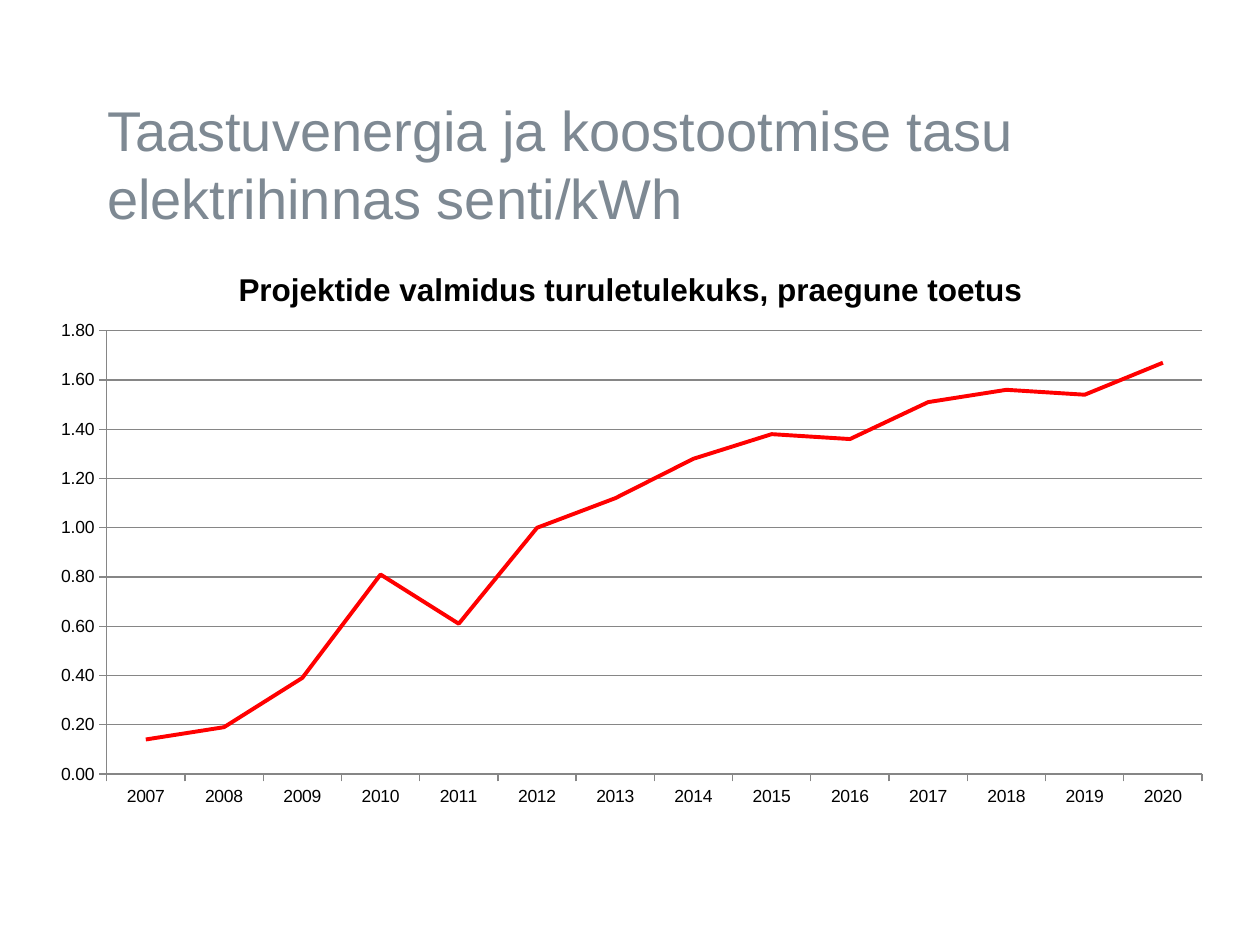
import pptx
import pptx.chart.data
import pptx.dml.color
import pptx.enum.chart
import pptx.enum.text
import pptx.oxml
import pptx.oxml.ns
import pptx.util

SLATE = pptx.dml.color.RGBColor(0x7E, 0x89, 0x93)
BLACK = pptx.dml.color.RGBColor(0, 0, 0)
GREY = pptx.dml.color.RGBColor(0x86, 0x86, 0x86)
RED = pptx.dml.color.RGBColor(0xFF, 0, 0)
FONT = "Arial"
WIDTH, HEIGHT = pptx.util.Inches(10), pptx.util.Inches(7.5)
FIRST_YEAR = 2007
FEES = (0.14, 0.19, 0.39, 0.81, 0.61, 1, 1.12, 1.28, 1.38, 1.36, 1.51, 1.56, 1.54, 1.67)


def box(left, top, width, height):
    """Turn inches into left, top, width and height lengths."""
    return [pptx.util.Inches(length) for length in (left, top, width, height)]


def style_font(font, size, color, bold=False):
    font.name = FONT
    font.size = pptx.util.Pt(size)
    font.bold = bold
    font.color.rgb = color


def set_heading(slide, text):
    heading = slide.shapes.title
    heading.left, heading.top, heading.width, heading.height = box(0.75, 0.67, 8.5, 1.25)
    frame = heading.text_frame
    frame.text = text
    frame.word_wrap = True
    frame.auto_size = pptx.enum.text.MSO_AUTO_SIZE.NONE
    frame.vertical_anchor = pptx.enum.text.MSO_ANCHOR.MIDDLE
    paragraph = frame.paragraphs[0]
    paragraph.alignment = pptx.enum.text.PP_ALIGN.LEFT
    style_font(paragraph.runs[0].font, 32, SLATE)


def style_line(line, color, points):
    line.color.rgb = color
    line.width = pptx.util.Pt(points)


def style_axis(axis):
    axis.major_tick_mark = pptx.enum.chart.XL_TICK_MARK.OUTSIDE
    axis.minor_tick_mark = pptx.enum.chart.XL_TICK_MARK.NONE
    style_line(axis.format.line, GREY, 0.75)
    style_font(axis.tick_labels.font, 10, BLACK)


def place_plot(chart, x, y, w, h):
    """Fix the inner plot area, in shares of the chart's size."""
    plot_area = chart.plots[0]._element.getparent()
    for old in plot_area.findall(pptx.oxml.ns.qn("c:layout")):
        plot_area.remove(old)
    shares = "".join(f'<c:{key} val="{share}"/>' for key, share in zip("xywh", (x, y, w, h)))
    plot_area.insert(0, pptx.oxml.parse_xml(
        f'<c:layout {pptx.oxml.ns.nsdecls("c")}><c:manualLayout>'
        '<c:layoutTarget val="inner"/><c:xMode val="edge"/><c:yMode val="edge"/>'
        f'{shares}</c:manualLayout></c:layout>'))


def add_fee_chart(slide, title):
    fees = pptx.chart.data.CategoryChartData(number_format="0.00")
    fees.categories = [str(FIRST_YEAR + step) for step in range(len(FEES))]
    fees.add_series("Series 1", FEES)
    chart = slide.shapes.add_chart(
        pptx.enum.chart.XL_CHART_TYPE.LINE, *box(0.28, 1.94, 9.45, 4.57), fees).chart
    style_font(chart.font, 10, BLACK)
    chart.has_legend = False
    chart.has_title = True
    chart.chart_title.include_in_layout = False
    chart.chart_title.text_frame.text = title
    style_font(chart.chart_title.text_frame.paragraphs[0].runs[0].font, 18, BLACK, bold=True)

    for axis in (chart.category_axis, chart.value_axis):
        style_axis(axis)
    scale = chart.value_axis
    scale.minimum_scale, scale.maximum_scale, scale.major_unit = 0, 1.8, 0.2
    scale.tick_labels.number_format = "0.00"
    scale.tick_labels.number_format_is_linked = False
    scale.has_major_gridlines = True
    style_line(scale.major_gridlines.format.line, GREY, 0.75)

    chart.plots[0].vary_by_categories = False
    fee_line = chart.plots[0].series[0]
    fee_line.smooth = False
    fee_line.marker.style = pptx.enum.chart.XL_MARKER_STYLE.NONE
    style_line(fee_line.format.line, RED, 2.25)
    place_plot(chart, 0.06, 0.15, 0.92, 0.77)


def main():
    deck = pptx.Presentation()
    deck.slide_width, deck.slide_height = WIDTH, HEIGHT
    slide = deck.slides.add_slide(deck.slide_layouts.get_by_name("Title Only"))
    set_heading(slide, "Taastuvenergia ja koostootmise tasu elektrihinnas senti/kWh")
    add_fee_chart(slide, "Projektide valmidus turuletulekuks, praegune toetus")
    deck.save("out.pptx")


if __name__ == "__main__":
    main()
